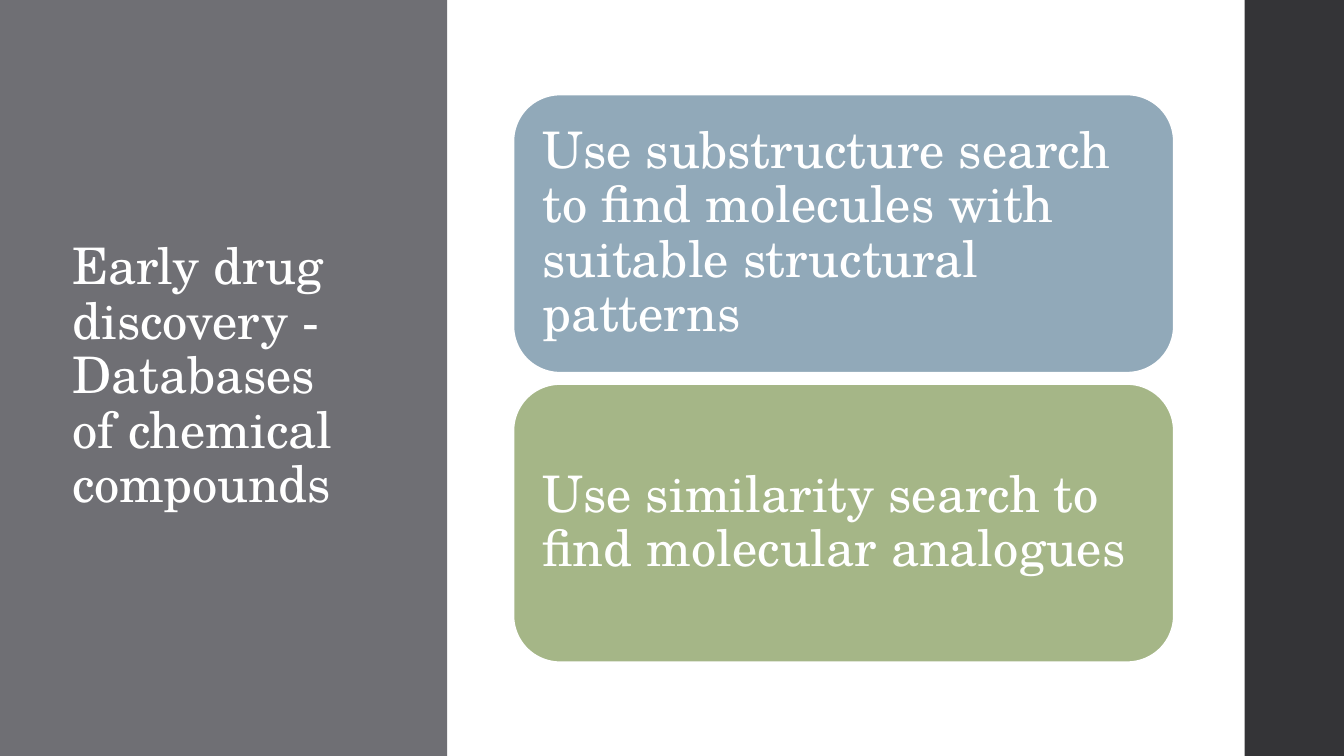
import pptx
import pptx.util
import pptx.dml.color
import pptx.enum.shapes
import pptx.enum.text

Pt = pptx.util.Pt
SHAPES = pptx.enum.shapes.MSO_SHAPE

SLIDE_WIDTH, SLIDE_HEIGHT = 960, 540
FONT = "TeX Gyre Schola"
COLORS = {
    "white": "FFFFFF",
    "panel": "6F6F74",
    "strip": "343437",
    "blue": "91A9B9",
    "green": "A5B687",
}
CARDS = [
    ("Use substructure search to find molecules with suitable structural patterns", "blue"),
    ("Use similarity search to find molecular analogues ", "green"),
]


def color(name):
    return pptx.dml.color.RGBColor.from_string(COLORS[name])


def add_block(slide, kind, box, fill):
    shape = slide.shapes.add_shape(kind, *map(Pt, box))
    shape.shadow.inherit = False
    shape.fill.solid()
    shape.fill.fore_color.rgb = color(fill)
    shape.line.fill.background()
    return shape


def write_text(shape, text, inset_x, inset_y):
    frame = shape.text_frame
    frame.word_wrap = True
    frame.vertical_anchor = pptx.enum.text.MSO_ANCHOR.MIDDLE
    frame.margin_left = frame.margin_right = Pt(inset_x)
    frame.margin_top = frame.margin_bottom = Pt(inset_y)
    frame.text = text
    paragraph = frame.paragraphs[0]
    paragraph.alignment = pptx.enum.text.PP_ALIGN.LEFT
    paragraph.line_spacing = 0.9
    for run in paragraph.runs:
        run.font.name = FONT
        run.font.size = Pt(36)
        run.font.color.rgb = color("white")


def add_title_panel(slide, left, top, width, height):
    add_block(slide, SHAPES.RECTANGLE, (left, top, width, height), "panel")
    title = slide.shapes.add_textbox(Pt(left + 44.6), Pt(top + 65.5), Pt(214), Pt(408))
    write_text(title, "Early drug discovery - Databases of chemical compounds", 7.2, 3.6)


def add_cards(slide, left, top, width, height, gap=8.2):
    card_height = (height - gap * (len(CARDS) - 1)) / len(CARDS)
    for index, (text, fill) in enumerate(CARDS):
        card_top = top + index * (card_height + gap)
        card = add_block(slide, SHAPES.ROUNDED_RECTANGLE, (left, card_top, width, card_height), fill)
        card.adjustments[0] = 0.167
        card.line.color.rgb = color("white")
        card.line.width = Pt(1.1)
        write_text(card, text, 10.8, 10.8)


def main():
    presentation = pptx.Presentation()
    presentation.slide_width = Pt(SLIDE_WIDTH)
    presentation.slide_height = Pt(SLIDE_HEIGHT)
    slide = presentation.slides.add_slide(presentation.slide_layouts[6])
    slide.background.fill.solid()
    slide.background.fill.fore_color.rgb = color("white")
    add_title_panel(slide, 0, 0, 319.4, SLIDE_HEIGHT)
    strip_left = 889
    add_block(slide, SHAPES.RECTANGLE, (strip_left, 0, SLIDE_WIDTH - strip_left, SLIDE_HEIGHT), "strip")
    add_cards(slide, 366.8, 67.6, 471.6, 405.4)
    presentation.save("out.pptx")


if __name__ == "__main__":
    main()
